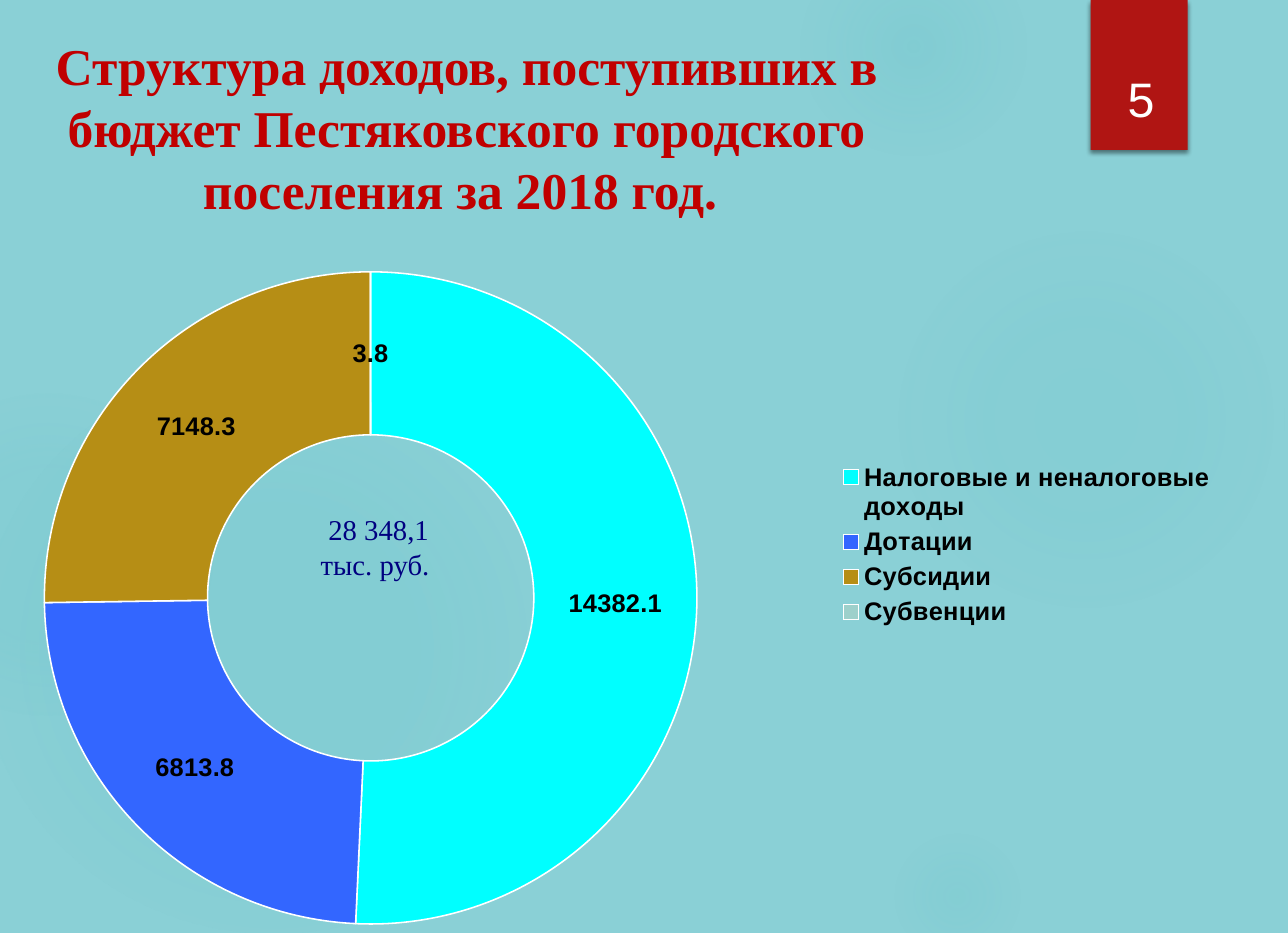
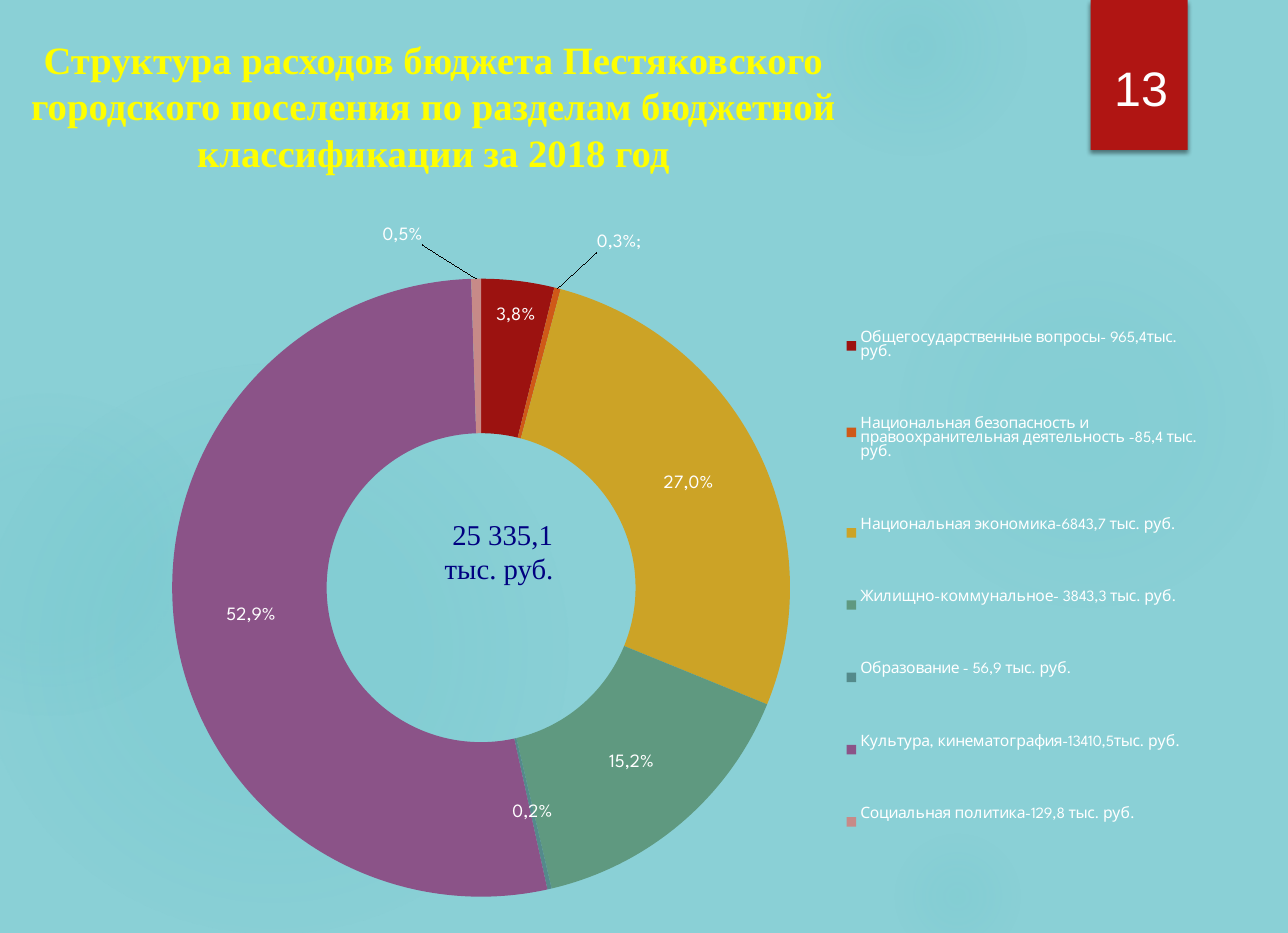
import pptx
import pptx.chart.data
import pptx.dml.color
import pptx.enum.chart
import pptx.enum.shapes
import pptx.enum.text
import pptx.oxml
import pptx.oxml.ns
import pptx.util

WIDE, HIGH = 11.42, 8.27
SANS, SERIF, ROUND = "Arial", "Times New Roman", "League Spartan"
HUES = {
    "back": "8AD0D6", "glow": "50B9C1", "band": "B01513",
    "white": "FFFFFF", "black": "000000", "navy": "000080",
    "red": "C00000", "yellow": "FFFF00",
}

# Glows behind every slide: box in percent, then (stop, opacity) pairs
GLOWS = [
    ((68.91, 24.43, 30.82, 41.11), ((0, 7), (36, 6), (69, 0))),
    ((62.17, -6.65, 17.51, 23.34), ((0, 14), (36, 7), (73, 0))),
    ((68.91, 88.88, 10.86, 14.39), ((0, 9), (36, 5), (66, 0))),
    ((-1.66, 38.94, 45.8, 61.06), ((0, 11), (36, 10), (75, 0))),
    ((-9.19, 42.2, 25.83, 34.46), ((0, 8), (36, 8), (72, 0))),
]
BAND = (84.68, 0, 7.53, 16.08)

# Slices: name, value, colour, then label and its shift where needed
INCOME = [
    ("Налоговые и неналоговые доходы", 14382.1, "00FFFF"),
    ("Дотации", 6813.8, "3366FF"),
    ("Субсидии", 7148.3, "B68E15"),
    ("Субвенции", 3.8, "9DD0CB"),
]
COSTS = [
    ("Общегосударственные вопросы- 965,4тыс. руб.", 965.4, "9C1210",
     "3,8%", (0.6, -5.7)),
    ("Национальная безопасность и правоохранительная деятельность -85,4 тыс. руб.",
     85.4, "CF5918", "0,3%;", (6.8, -16.6)),
    ("Национальная экономика-6843,7 тыс. руб.", 6843.7, "CCA326", "27,0%", None),
    ("Жилищно-коммунальное- 3843,3 тыс. руб.", 3843.3, "5F9980", "15,2%", None),
    ("Образование - 56,9 тыс. руб.", 56.9, "548A8B", "0,2%", None),
    ("Культура, кинематография-13410,5тыс. руб.", 13410.5, "8B5388", "52,9%", None),
    ("Социальная политика-129,8 тыс. руб.", 129.8, "C78A88",
     "0,5%", (-6.3, -16.6)),
]


def rgb(hue):
    return pptx.dml.color.RGBColor.from_string(hue)


def place(box):
    """Turn percents of the slide into lengths."""
    return [pptx.util.Inches(part * side / 100)
            for part, side in zip(box, (WIDE, HIGH, WIDE, HIGH))]


def node(text):
    """Build an XML element with the drawing and chart namespaces."""
    head, tail = text.split(">", 1)
    spaces = pptx.oxml.ns.nsdecls("a", "c")
    return pptx.oxml.parse_xml(f"{head} {spaces}>{tail}")


def style(font, size, hue, face, bold=False):
    font.size = pptx.util.Pt(size)
    font.color.rgb = rgb(hue)
    font.name = face
    font.bold = bold


def shape(slide, kind, box, hue):
    item = slide.shapes.add_shape(kind, *place(box))
    item.shadow.inherit = False
    item.fill.solid()
    item.fill.fore_color.rgb = rgb(hue)
    item.line.fill.background()
    return item


def write(item, text, size, hue, face, bold=False):
    """Fill a shape with centred text in one style."""
    frame = item.text_frame
    frame.text = text
    for para in frame.paragraphs:
        para.alignment = pptx.enum.text.PP_ALIGN.CENTER
        for run in para.runs:
            style(run.font, size, hue, face, bold)
    return frame


def glow(slide, box, stops):
    """Add an ellipse that fades out from its centre."""
    kind = pptx.enum.shapes.MSO_SHAPE.OVAL
    item = shape(slide, kind, box, HUES["glow"])
    marks = "".join(
        f'<a:gs pos="{pos * 1000}"><a:srgbClr val="{HUES["glow"]}">'
        f'<a:alpha val="{alpha * 1000}"/></a:srgbClr></a:gs>'
        for pos, alpha in stops)
    fade = node(
        f'<a:gradFill><a:gsLst>{marks}</a:gsLst><a:path path="circle">'
        '<a:fillToRect l="50000" t="50000" r="50000" b="50000"/>'
        '</a:path></a:gradFill>')
    props = item._element.spPr
    props.replace(props.find(pptx.oxml.ns.qn("a:solidFill")), fade)


def base(deck, page, top):
    """Start a slide with the glows, the band and the page number."""
    slide = deck.slides.add_slide(deck.slide_layouts[6])
    slide.background.fill.solid()
    slide.background.fill.fore_color.rgb = rgb(HUES["back"])
    for box, stops in GLOWS:
        glow(slide, box, stops)
    rect = pptx.enum.shapes.MSO_SHAPE.RECTANGLE
    band = shape(slide, rect, BAND, HUES["band"])
    effect = band._element.spPr.find(pptx.oxml.ns.qn("a:effectLst"))
    effect.append(node(
        '<a:outerShdw blurRad="38100" dist="25400" dir="5400000">'
        f'<a:srgbClr val="{HUES["black"]}"><a:alpha val="45000"/>'
        '</a:srgbClr></a:outerShdw>'))
    tag = shape(slide, rect, (85.4, top, 6.39, 5.56), HUES["band"])
    frame = write(tag, str(page), 30.9, HUES["white"], SANS)
    frame.vertical_anchor = pptx.enum.text.MSO_ANCHOR.BOTTOM
    return slide


def title(slide, box, text, size, hue):
    item = slide.shapes.add_textbox(*place(box))
    write(item, text, size, hue, SERIF, True).word_wrap = True


def total(slide, left, top, text):
    """Write the sum inside the ring."""
    item = slide.shapes.add_textbox(*place((left, top, 13.4, 13.06)))
    write(item, text, 18.3, HUES["navy"], SERIF).word_wrap = False


def layout(box, inner=False):
    """Make a manual chart layout from percents of the chart."""
    area = '<c:layoutTarget val="inner"/>' if inner else ""
    modes = ""
    if len(box) == 4:
        modes = '<c:xMode val="edge"/><c:yMode val="edge"/>'
    sides = "".join(f'<c:{side} val="{part / 100:.4f}"/>'
                    for side, part in zip("xywh", box))
    return node(f"<c:layout><c:manualLayout>{area}{modes}{sides}"
                "</c:manualLayout></c:layout>")


def drop(parent):
    """Remove the automatic layout."""
    for old in parent.findall(pptx.oxml.ns.qn("c:layout")):
        parent.remove(old)


def ring(slide, box, slices, plot, key, font, small, edge=None):
    """Add a doughnut; small holds the legend and label sizes."""
    data = pptx.chart.data.CategoryChartData()
    data.categories = [part[0] for part in slices]
    data.add_series("Series 1", [part[1] for part in slices])
    kind = pptx.enum.chart.XL_CHART_TYPE.DOUGHNUT
    chart = slide.shapes.add_chart(kind, *place(box), data).chart
    chart.has_title = False
    style(chart.font, *font)

    # Plot and legend places
    area = chart._chartSpace.chart.plotArea
    drop(area)
    area.insert(0, layout(plot, True))
    chart.has_legend = True
    legend = chart.legend
    legend.position = pptx.enum.chart.XL_LEGEND_POSITION.RIGHT
    legend.include_in_layout = False
    style(legend.font, small[0], *font[1:])
    drop(legend._element)
    over = legend._element.find(pptx.oxml.ns.qn("c:overlay"))
    over.addprevious(layout(key))

    # Slices and labels
    chart.plots[0].vary_by_categories = True
    series = chart.plots[0].series[0]
    labels = series.data_labels
    labels.show_value = True
    style(labels.font, small[1], *font[1:])
    for at, (_, _, hue, *label) in enumerate(slices):
        point = series.points[at]
        point.format.fill.solid()
        point.format.fill.fore_color.rgb = rgb(hue)
        if edge:
            point.format.line.color.rgb = rgb(edge)
            point.format.line.width = pptx.util.Pt(1)
        else:
            point.format.line.fill.background()
        if label:
            text, shift = label
            frame = point.data_label.text_frame
            frame.text = text
            style(frame.paragraphs[0].runs[0].font, small[1], *font[1:])
            if shift:
                point.data_label._get_or_add_dLbl().insert(1, layout(shift))


def income(deck):
    slide = base(deck, 5, 8.65)
    ring(slide, (2.71, 17.38, 92.29, 81.74), INCOME,
         (0.8, 14.4, 54.9, 85.6), (68.35, 38.7, 31.5, 23),
         (16.2, HUES["black"], SANS, True), (16.2, 16.2), HUES["white"])
    title(slide, (0, 3.08, 72.42, 19.71),
          "Структура доходов, поступивших в бюджет Пестяковского "
          "городского поселения за 2018 год. ", 32.9, HUES["red"])
    total(slide, 22.42, 54.29, " 28 348,1\nтыс. руб.")


def costs(deck):
    slide = base(deck, 13, 7.5)
    ring(slide, (5.1, 21.75, 92.29, 77.39), COSTS,
         (7.5, 10.5, 54.9, 85.6), (65.2, 9.8, 30.5, 84),
         (18, HUES["white"], ROUND), (10, 12))
    title(slide, (0, 3.22, 67.34, 19.59),
          "Структура расходов бюджета Пестяковского городского поселения "
          "по разделам бюджетной классификации за 2018 год",
          24.7, HUES["yellow"])
    total(slide, 32.05, 54.78, " 25 335,1\nтыс. руб.")


def main():
    deck = pptx.Presentation()
    deck.slide_width = pptx.util.Inches(WIDE)
    deck.slide_height = pptx.util.Inches(HIGH)
    income(deck)
    costs(deck)
    deck.save("out.pptx")


if __name__ == "__main__":
    main()
